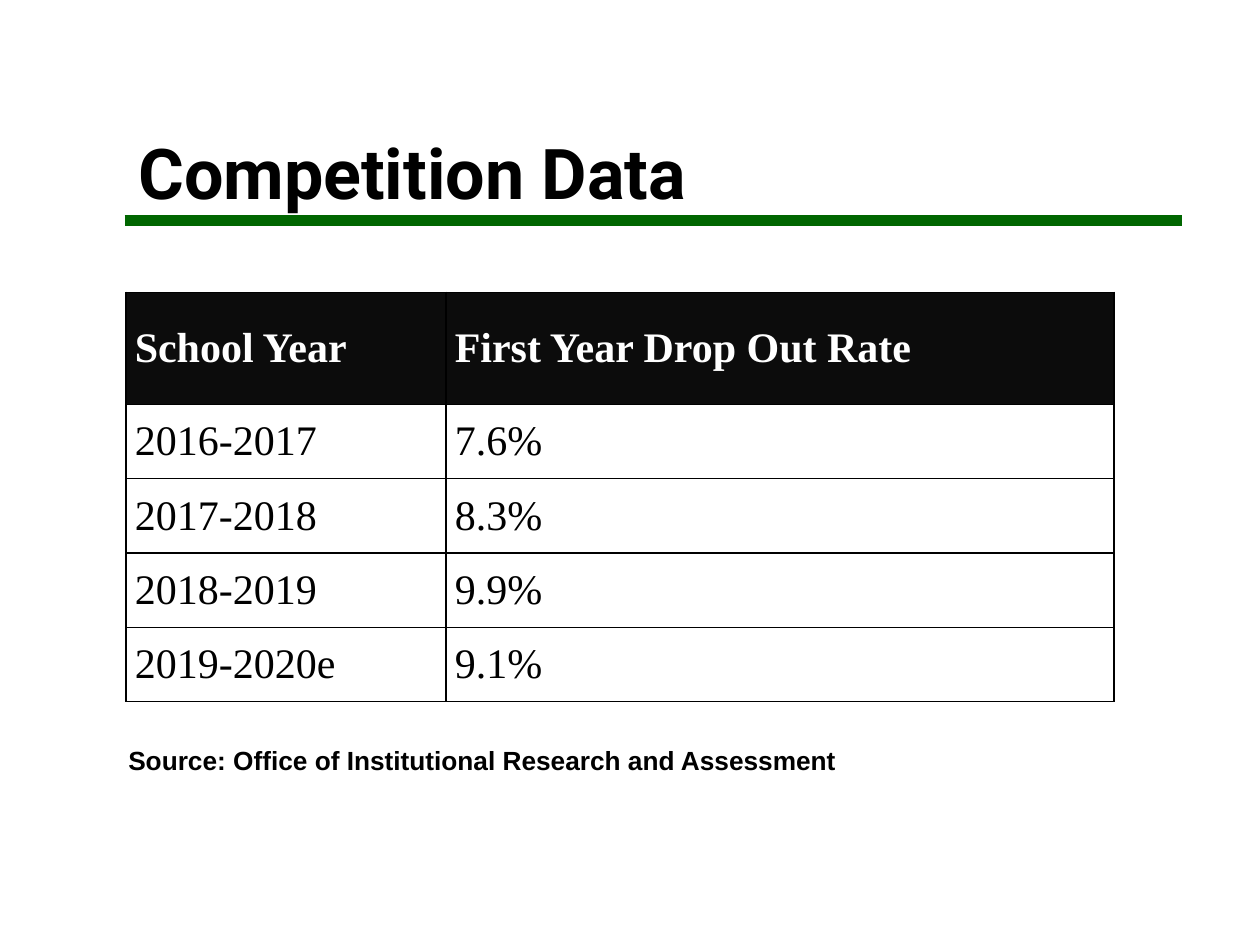
from dataclasses import dataclass

from lxml.etree import SubElement
from pptx import Presentation
from pptx.dml.color import RGBColor
from pptx.enum.shapes import MSO_CONNECTOR
from pptx.enum.text import MSO_ANCHOR
from pptx.oxml.ns import qn
from pptx.util import Inches, Pt


@dataclass(frozen=True)
class Theme:
    ink: str = "000000"
    paper: str = "FFFFFF"
    green: str = "006600"
    head: str = "0C0C0C"
    title: int = 40
    body: int = 24
    note: int = 15
    title_font: str = "Roboto"
    body_font: str = "Times New Roman"
    note_font: str = "Arial"


class Page:
    def __init__(self, slide, theme):
        self.slide = slide
        self.theme = theme

    def style(self, frame, face, size, color, bold):
        for run in frame.paragraphs[0].runs:
            font = run.font
            font.name, font.size, font.bold = face, Pt(size), bold
            font.color.rgb = RGBColor.from_string(color)

    def rule(self, left, right, top, width):
        line = self.slide.shapes.add_connector(
            MSO_CONNECTOR.STRAIGHT, Inches(left), Inches(top), Inches(right), Inches(top))
        line.line.color.rgb = RGBColor.from_string(self.theme.green)
        line.line.width = Pt(width)
        SubElement(line._element.spPr, qn("a:effectLst"))

    def text(self, words, area, face, size, anchor=MSO_ANCHOR.TOP, pitch=1.0):
        box = self.slide.shapes.add_textbox(*map(Inches, area))
        frame = box.text_frame
        frame.word_wrap = True
        frame.vertical_anchor = anchor
        frame.text = words
        frame.paragraphs[0].line_spacing = pitch
        self.style(frame, face, size, self.theme.ink, True)

    def border(self, cell):
        props = cell._tc.get_or_add_tcPr()
        for side in ("lnL", "lnR", "lnT", "lnB"):
            edge = SubElement(props, qn(f"a:{side}"), w=str(Pt(1)))
            fill = SubElement(edge, qn("a:solidFill"))
            SubElement(fill, qn("a:srgbClr"), val=self.theme.ink)

    def cell(self, cell, words, head):
        theme = self.theme
        cell.text = words
        cell.vertical_anchor = MSO_ANCHOR.MIDDLE
        cell.margin_left = cell.margin_right = Inches(0.07)
        cell.margin_top = cell.margin_bottom = 0
        self.border(cell)
        if head:
            cell.fill.solid()
            cell.fill.fore_color.rgb = RGBColor.from_string(theme.head)
        else:
            cell.fill.background()
        color = theme.paper if head else theme.ink
        self.style(cell.text_frame, theme.body_font, theme.body, color, head)

    def table(self, data, left, top, widths, heights):
        size = (left, top, sum(widths), sum(heights))
        grid = self.slide.shapes.add_table(
            len(data), len(widths), *map(Inches, size)).table
        for col, width in zip(grid.columns, widths):
            col.width = Inches(width)
        for r, (row, height) in enumerate(zip(data, heights)):
            grid.rows[r].height = Inches(height)
            for c, words in enumerate(row):
                self.cell(grid.cell(r, c), words, r == 0)


def main():
    deck = Presentation()
    deck.slide_width, deck.slide_height = Inches(10), Inches(7.5)
    theme = Theme()
    page = Page(deck.slides.add_slide(deck.slide_layouts[6]), theme)

    page.rule(0.99, 9.38, 1.75, 6)
    page.text("Competition Data", (1, 0.3, 5.83, 1.45), theme.title_font,
              theme.title, MSO_ANCHOR.BOTTOM, 0.9)

    rates = [
        ("School Year", "First Year Drop Out Rate"),
        ("2016-2017", "7.6%"),
        ("2017-2018", "8.3%"),
        ("2018-2019", "9.9%"),
        ("2019-2020e", "9.1%"),
    ]
    heights = [0.89] + [0.59] * (len(rates) - 1)
    page.table(rates, 1, 2.32, [2.54, 5.3], heights)

    page.text("Source: Office of Institutional Research and Assessment",
              (0.92, 5.86, 6, 0.56), theme.note_font, theme.note)
    deck.save("out.pptx")


if __name__ == "__main__":
    main()
